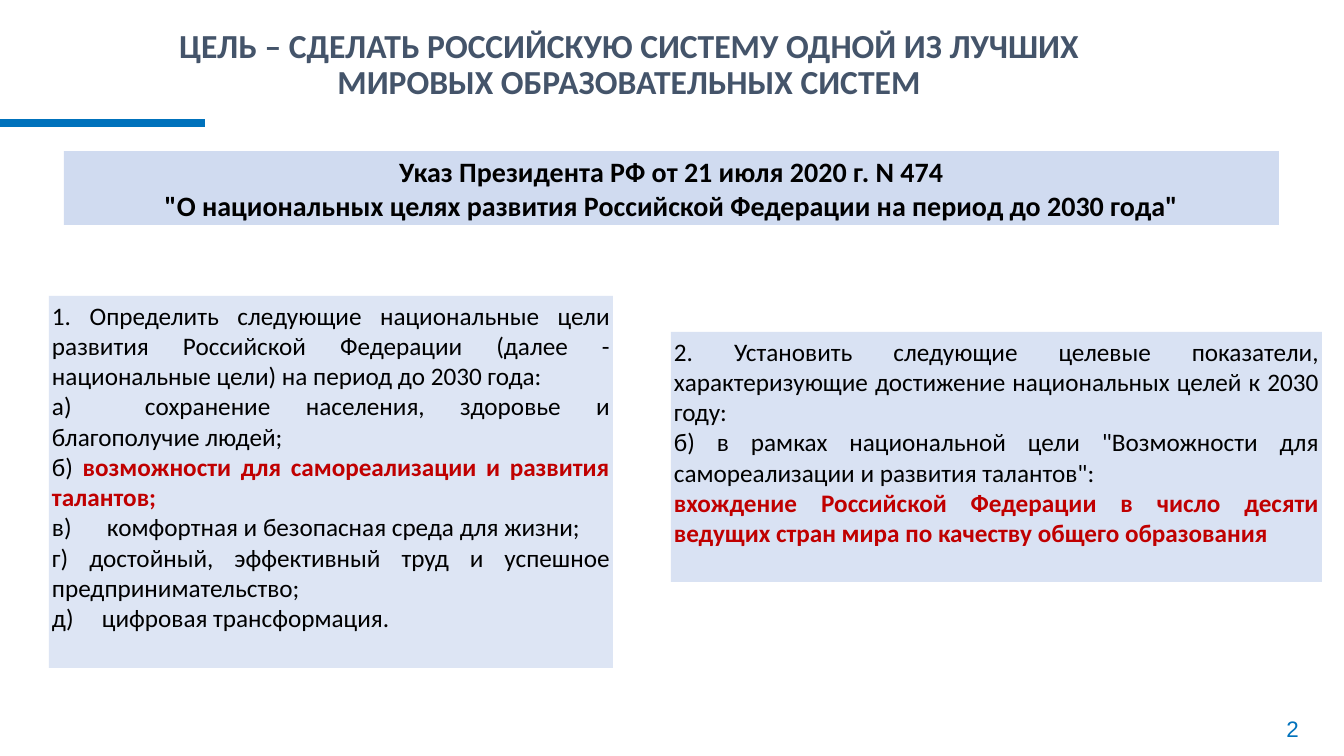
"""Build the slide about the national education goal."""
from dataclasses import dataclass

from pptx import Presentation
from pptx.dml.color import RGBColor
from pptx.enum.shapes import MSO_CONNECTOR as Connector, MSO_SHAPE as Shape
from pptx.enum.text import MSO_ANCHOR as Anchor, MSO_AUTO_SIZE as AutoSize, PP_ALIGN as Align
from pptx.oxml.ns import qn
from pptx.util import Pt
from lxml.etree import SubElement

SCALE = 914400 / 100.8


@dataclass(frozen=True)
class Theme:
    """Colours, fonts and type sizes of the slide."""
    heading: str = "44546A"
    accent: str = "0072BC"
    panel: str = "4472C4"
    text: str = "000000"
    highlight: str = "C00000"
    font: str = "Calibri"
    number_font: str = "Arial"
    title_size: int = 24
    decree_size: int = 20
    body_size: int = 18
    number_size: int = 16
    rule_width: int = 6


THEME = Theme()

DECREE = (
    'Указ Президента РФ от 21 июля 2020 г. N 474',
    '"О национальных целях развития Российской Федерации на период до 2030 года"',
)
GOALS = (
    ("1. Определить следующие национальные цели развития Российской Федерации "
     "(далее - национальные цели) на период до 2030 года:", "", 0),
    ("а)\tсохранение населения, здоровье и благополучие людей;", "", 93),
    ("б) ", "возможности для самореализации и развития талантов;", 0),
    ("в)\tкомфортная и безопасная среда для жизни;", "", 55),
    ("г) достойный, эффективный труд и успешное предпринимательство;", "", 0),
    ("д)\tцифровая трансформация.", "", 50),
)
TARGETS = (
    ("2. Установить следующие целевые показатели, характеризующие достижение "
     "национальных целей к 2030 году:", "", 0),
    ('б) в рамках национальной цели "Возможности для самореализации и развития талантов":', "", 0),
    ("", "вхождение Российской Федерации в число десяти ведущих стран мира "
         "по качеству общего образования", 0),
)


def px(length):
    """Turn pixels into EMU."""
    return round(length * SCALE)


def box(*lengths):
    """Turn a pixel box into EMU."""
    return [px(length) for length in lengths]


def add_run(paragraph, text, size, color=THEME.text, bold=False, font=THEME.font):
    """Add one formatted run."""
    run = paragraph.add_run()
    run.text = text
    run.font.size = Pt(size)
    run.font.name = font
    run.font.bold = bold
    run.font.color.rgb = RGBColor.from_string(color)


def add_title(slide, text):
    """Fill and place the title placeholder."""
    title = slide.shapes.title
    title.left, title.top, title.width, title.height = box(118, 4, 1022, 123)
    frame = title.text_frame
    frame.auto_size = AutoSize.NONE
    frame.vertical_anchor = Anchor.MIDDLE
    paragraph = frame.paragraphs[0]
    paragraph.alignment = Align.CENTER
    paragraph.line_spacing = 0.9
    add_run(paragraph, text, THEME.title_size, THEME.heading, True)


def add_rule(slide):
    """Draw the accent rule under the title."""
    rule = slide.shapes.add_connector(Connector.STRAIGHT, *box(0, 123, 205, 123))
    rule.line.color.rgb = RGBColor.from_string(THEME.accent)
    rule.line.width = Pt(THEME.rule_width)
    SubElement(rule._element.spPr, qn("a:effectLst"))


def add_panel(slide, place, opacity, anchor):
    """Add a translucent panel and return its text frame."""
    panel = slide.shapes.add_shape(Shape.RECTANGLE, *box(*place))
    panel.shadow.inherit = False
    panel.line.fill.background()
    panel.fill.solid()
    panel.fill.fore_color.rgb = RGBColor.from_string(THEME.panel)
    color = panel.fill._xPr.find(qn("a:solidFill"))[0]
    SubElement(color, qn("a:alpha"), val=str(opacity * 1000))
    frame = panel.text_frame
    frame.word_wrap = True
    frame.vertical_anchor = anchor
    frame.margin_left = frame.margin_right = px(3)
    frame.margin_top = frame.margin_bottom = px(4)
    return frame


def add_decree(slide, lines):
    """Add the decree banner."""
    frame = add_panel(slide, (64, 151, 1215, 74), 25, Anchor.MIDDLE)
    paragraph = frame.paragraphs[0]
    paragraph.alignment = Align.CENTER
    for index, line in enumerate(lines):
        if index:
            paragraph.add_line_break()
        add_run(paragraph, line, THEME.decree_size, bold=True)


def add_clauses(slide, place, opacity, clauses):
    """Add a panel of justified clauses with highlighted endings."""
    frame = add_panel(slide, place, opacity, Anchor.TOP)
    for index, (plain, strong, tab) in enumerate(clauses):
        paragraph = frame.add_paragraph() if index else frame.paragraphs[0]
        paragraph.alignment = Align.JUSTIFY
        if tab:
            tabs = SubElement(paragraph._p.get_or_add_pPr(), qn("a:tabLst"))
            SubElement(tabs, qn("a:tab"), pos=str(px(tab)), algn="l")
        if plain:
            add_run(paragraph, plain, THEME.body_size)
        if strong:
            add_run(paragraph, strong, THEME.body_size, THEME.highlight, True)


def add_number(slide, number):
    """Add the page number."""
    frame = slide.shapes.add_textbox(*box(1252, 708, 81, 41)).text_frame
    frame.word_wrap = True
    frame.vertical_anchor = Anchor.MIDDLE
    paragraph = frame.paragraphs[0]
    paragraph.alignment = Align.CENTER
    add_run(paragraph, number, THEME.number_size, THEME.accent, font=THEME.number_font)


def main():
    """Build and save the presentation."""
    presentation = Presentation()
    presentation.slide_width, presentation.slide_height = box(1344, 756)
    slide = presentation.slides.add_slide(presentation.slide_layouts[5])
    add_number(slide, "2")
    add_rule(slide)
    add_title(slide, "ЦЕЛЬ – СДЕЛАТЬ РОССИЙСКУЮ СИСТЕМУ ОДНОЙ ИЗ ЛУЧШИХ "
                     "МИРОВЫХ ОБРАЗОВАТЕЛЬНЫХ СИСТЕМ")
    add_decree(slide, DECREE)
    add_clauses(slide, (49, 296, 564, 372), 18, GOALS)
    add_clauses(slide, (671, 332, 651, 250), 20, TARGETS)
    presentation.save("out.pptx")


if __name__ == "__main__":
    main()
